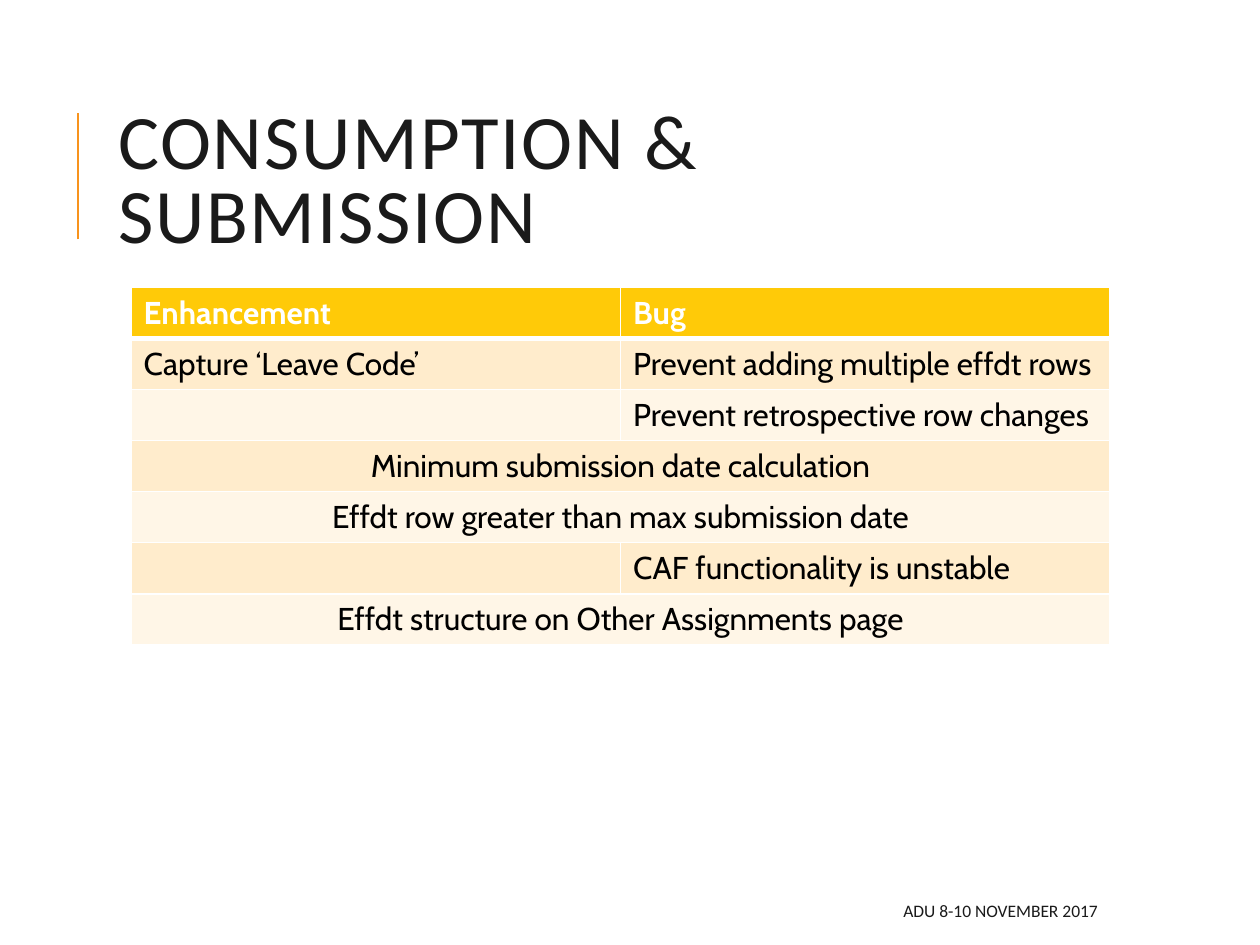
from lxml import etree
from pptx import Presentation
from pptx.dml.color import RGBColor
from pptx.enum.shapes import MSO_CONNECTOR
from pptx.enum.text import MSO_ANCHOR, PP_ALIGN
from pptx.oxml.ns import qn
from pptx.util import Inches, Pt

LINE = MSO_CONNECTOR.STRAIGHT
MIDDLE = MSO_ANCHOR.MIDDLE
LEFT, CENTER, RIGHT = PP_ALIGN.LEFT, PP_ALIGN.CENTER, PP_ALIGN.RIGHT

WHITE = RGBColor(0xFF, 0xFF, 0xFF)
BLACK = RGBColor(0, 0, 0)
INK = RGBColor(0x1A, 0x1A, 0x1A)
ORANGE = RGBColor(0xF8, 0x93, 0x1D)
GOLD = RGBColor(0xFF, 0xCA, 0x08)
BANDS = RGBColor(0xFF, 0xEC, 0xCC), RGBColor(0xFF, 0xF6, 0xE7)

EDGE = 8.81
ROWS = [
    ("Enhancement", "Bug"),
    ("Capture ‘Leave Code’", "Prevent adding multiple effdt rows"),
    ("", "Prevent retrospective row changes"),
    ("Minimum submission date calculation",),
    ("Effdt row greater than max submission date",),
    ("", "CAF functionality is unstable"),
    ("Effdt structure on Other Assignments page",),
]


def set_font(font, name, size, color, bold=False):
    font.name = name
    font.size = Pt(size)
    font.color.rgb = color
    font.bold = bold


def add_label(slide, text, left, top, height, size, align=LEFT):
    box = slide.shapes.add_textbox(
        Inches(left), Inches(top), Inches(EDGE - left), Inches(height))
    frame = box.text_frame
    frame.word_wrap = True
    frame.vertical_anchor = MIDDLE
    para = frame.paragraphs[0]
    para.text = text
    para.alignment = align
    set_font(para.font, "Calibri", size, INK)
    return para


def add_title(slide, text):
    para = add_label(slide, text, 0.84, 0.64, 1.64, 44)
    para.line_spacing = 0.8
    para.runs[0].font.color.rgb = INK
    para.runs[0]._r.get_or_add_rPr().set("spc", "100")


def add_rule(slide, left, top, end):
    rule = slide.shapes.add_connector(
        LINE, Inches(left), Inches(end), Inches(left), Inches(top))
    rule.line.color.rgb = ORANGE
    rule.line.width = Pt(1.5)
    etree.SubElement(rule._element.spPr, qn("a:effectLst"))


def set_edges(cell, row):
    props = cell._tc.get_or_add_tcPr()
    widths = {"L": 1, "R": 1, "T": 3 if row == 1 else 1, "B": 3 if row == 0 else 1}
    for side, width in widths.items():
        line = etree.SubElement(props, qn(f"a:ln{side}"), w=str(Pt(width)))
        fill = etree.SubElement(line, qn("a:solidFill"))
        etree.SubElement(fill, qn("a:srgbClr"), val=str(WHITE))


def set_cell(cell, text, row, align):
    set_edges(cell, row)
    cell.fill.solid()
    cell.fill.fore_color.rgb = BANDS[(row - 1) % 2] if row else GOLD
    para = cell.text_frame.paragraphs[0]
    para.text = text
    para.alignment = align
    set_font(para.font, "Cabin", 18, BLACK if row else WHITE, row == 0)


def add_grid(slide, left, top, height):
    grid = slide.shapes.add_table(
        len(ROWS), 2, Inches(left), Inches(top),
        Inches(EDGE - left), Inches(height)).table
    for row, texts in enumerate(ROWS):
        wide = len(texts) == 1
        if wide:
            grid.cell(row, 0).merge(grid.cell(row, 1))
        for col in range(2):
            text = texts[col] if col < len(texts) else ""
            set_cell(grid.cell(row, col), text, row, CENTER if wide else LEFT)


def main():
    deck = Presentation()
    deck.slide_width, deck.slide_height = Inches(10), Inches(7.5)
    slide = deck.slides.add_slide(deck.slide_layouts[6])
    add_rule(slide, 0.62, 0.9, 1.9)
    add_title(slide, "CONSUMPTION & SUBMISSION")
    add_grid(slide, 1.04, 2.28, 2.84)
    add_label(slide, "ADU 8-10 NOVEMBER 2017", 3.97, 7.08, 0.3, 10, RIGHT)
    deck.save("out.pptx")


if __name__ == "__main__":
    main()
